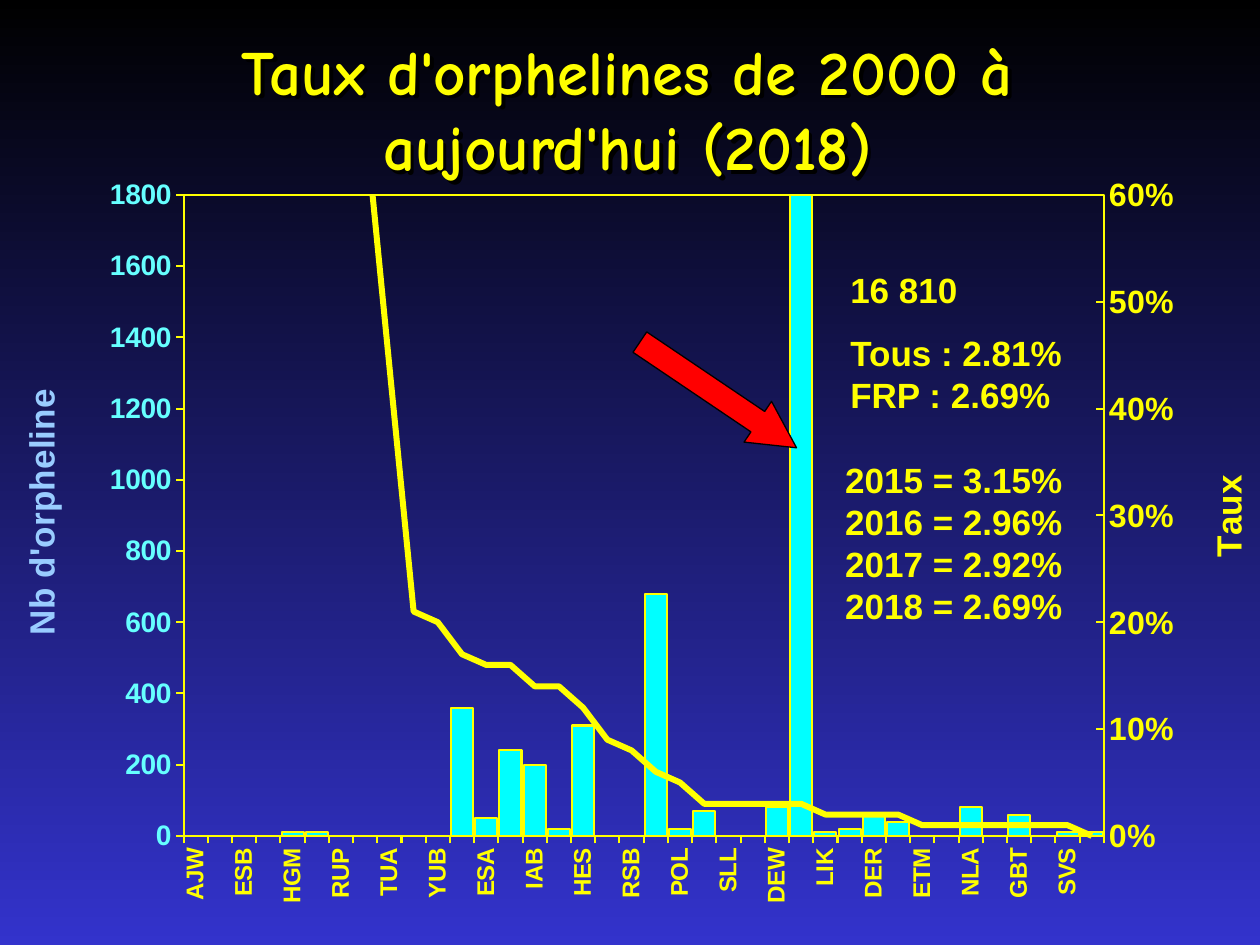
from copy import deepcopy

from lxml import etree
from pptx import Presentation
from pptx.chart.axis import ValueAxis
from pptx.chart.data import CategoryChartData
from pptx.dml.color import RGBColor
from pptx.enum.chart import XL_CHART_TYPE, XL_MARKER_STYLE, XL_TICK_MARK
from pptx.enum.shapes import MSO_SHAPE
from pptx.enum.text import MSO_ANCHOR, MSO_AUTO_SIZE, PP_ALIGN
from pptx.oxml import parse_xml
from pptx.oxml.ns import nsdecls, qn
from pptx.util import Inches, Pt

BLACK = RGBColor(0x00, 0x00, 0x00)
BLUE = RGBColor(0x33, 0x33, 0xCC)
YELLOW = RGBColor(0xFF, 0xFF, 0x00)
CYAN = RGBColor(0x00, 0xFF, 0xFF)
AQUA = RGBColor(0x66, 0xFF, 0xFF)
PALE = RGBColor(0x99, 0xCC, 0xFF)
RED = RGBColor(0xFF, 0x00, 0x00)

CODES = (
    "AJW DKV ESB MRA HGM ESM RUP GHL TUA NAW YUB FRS ESA ESI IAB LVR HES NOO RSB "
    "BLB POL DEH SLL BYM DEW FRP LIK CZP DER PLG ETM SKB NLA HRZ GBT RUM SVS CIJ"
).split()
COUNTS = [0, 0, 0, 0, 10, 10, 0, 0, 0, 0, 0, 360, 50, 240, 200, 20, 310, 0, 0,
          680, 20, 70, 0, 0, 80, 16810, 10, 20, 60, 40, 0, 0, 80, 0, 60, 0, 10, 10]
RATES = [1, 1, 1, 1, 0.89, 0.88, 0.75, 0.67, 0.44, 0.21, 0.2, 0.17, 0.16, 0.16,
         0.14, 0.14, 0.12, 0.09, 0.08, 0.06, 0.05, 0.03, 0.03, 0.03, 0.03, 0.03,
         0.02, 0.02, 0.02, 0.02, 0.01, 0.01, 0.01, 0.01, 0.01, 0.01, 0.01, 0]


def set_font(font, size, color, name="Arial"):
    font.size, font.bold, font.name = Pt(size), True, name
    font.color.rgb = color


def set_line(line, color, width):
    line.color.rgb = color
    line.width = Pt(width)


def set_back(slide):
    fill = slide.background.fill
    fill.gradient()
    fill.gradient_angle = 270
    for stop, color in zip(fill.gradient_stops, (BLACK, BLUE)):
        stop.color.rgb = color


def add_title(slide, text):
    box = slide.shapes.add_textbox(Inches(0.73), Inches(0.23), Inches(8.5), Inches(1.25))
    frame = box.text_frame
    frame.word_wrap = True
    frame.vertical_anchor = MSO_ANCHOR.MIDDLE
    frame.text = text
    para = frame.paragraphs[0]
    para.alignment = PP_ALIGN.CENTER
    set_font(para.font, 36, YELLOW, "Comic Neue")
    box._element.spPr.append(parse_xml(
        f'<a:effectLst {nsdecls("a")}><a:outerShdw dist="38100" dir="2700000">'
        f'<a:srgbClr val="{BLACK}"/></a:outerShdw></a:effectLst>'))


def add_note(slide, left, top, width, height, lines):
    box = slide.shapes.add_textbox(*map(Inches, (left, top, width, height)))
    frame = box.text_frame
    frame.word_wrap = False
    frame.auto_size = MSO_AUTO_SIZE.SHAPE_TO_FIT_TEXT
    frame.text = "\n".join(lines)
    for para in frame.paragraphs:
        set_font(para.font, 20, YELLOW)


def add_arrow(slide):
    arrow = slide.shapes.add_shape(
        MSO_SHAPE.RIGHT_ARROW, Inches(4.95), Inches(2.94), Inches(1.5), Inches(0.39))
    arrow.adjustments[0], arrow.adjustments[1] = 0.5, 0.95
    arrow.rotation = 34
    arrow.shadow.inherit = False
    arrow.fill.solid()
    arrow.fill.fore_color.rgb = RED
    set_line(arrow.line, BLACK, 0.75)


def layout(x, y, w=None, h=None):
    """Manual chart layout, in fractions of the chart's size."""
    parts = [("layoutTarget", "inner")] if w else []
    parts += [("xMode", "edge"), ("yMode", "edge"), ("x", x), ("y", y)]
    if w:
        parts += [("w", w), ("h", h)]
    body = "".join(f'<c:{tag} val="{val}"/>' for tag, val in parts)
    return parse_xml(f'<c:layout {nsdecls("c")}><c:manualLayout>{body}'
                     '</c:manualLayout></c:layout>')


def style_axis(axis, size, color, tick=XL_TICK_MARK.OUTSIDE):
    axis.has_major_gridlines = False
    axis.major_tick_mark = tick
    set_font(axis.tick_labels.font, size, color)
    set_line(axis.format.line, YELLOW, 1.15)


def scale_axis(axis, top, step):
    axis.minimum_scale, axis.maximum_scale, axis.major_unit = 0, top, step


def name_axis(axis, text, color, x, y):
    frame = axis.axis_title.text_frame
    frame.text = text
    set_font(frame.paragraphs[0].font, 20, color)
    frame._txBody.find(qn("a:bodyPr")).set("rot", "-5400000")
    title = axis.axis_title._element
    for old in title.findall(qn("c:layout")):
        title.remove(old)
    title.find(qn("c:tx")).addnext(layout(x, y))


def split_line(area):
    """Move the second series to a line plot with its own axes; return its value axis."""
    bars = area.find(qn("c:barChart"))
    rate = bars.findall(qn("c:ser"))[1]
    for tag in rate.findall(qn("c:invertIfNegative")):
        rate.remove(tag)
    plot = parse_xml(f'<c:lineChart {nsdecls("c")}><c:grouping val="standard"/>'
                     '<c:varyColors val="0"/><c:marker val="1"/>'
                     '<c:axId val="5001"/><c:axId val="5002"/></c:lineChart>')
    plot.insert(2, rate)
    bars.addnext(plot)
    cat = deepcopy(area.find(qn("c:catAx")))
    val = deepcopy(area.find(qn("c:valAx")))
    for axis, own, other in ((cat, "5001", "5002"), (val, "5002", "5001")):
        axis.find(qn("c:axId")).set("val", own)
        axis.find(qn("c:crossAx")).set("val", other)
    cat.find(qn("c:delete")).set("val", "1")
    val.find(qn("c:axPos")).set("val", "r")
    val.find(qn("c:crosses")).set("val", "max")
    area.find(qn("c:valAx")).addnext(cat)
    cat.addnext(val)
    return ValueAxis(val)


def add_plot(slide):
    data = CategoryChartData()
    data.categories = CODES
    data.add_series("Series 1", COUNTS, "0")
    data.add_series("Series 2", RATES, "0%")
    chart = slide.shapes.add_chart(
        XL_CHART_TYPE.COLUMN_CLUSTERED, Inches(0), Inches(1.23),
        Inches(10), Inches(6.22), data).chart
    chart.has_legend = chart.has_title = False
    chart.font.size, chart.font.name = Pt(11.5), "Arial"
    area = chart._chartSpace.chart.plotArea
    left = ValueAxis(area.find(qn("c:valAx")))
    right = split_line(area)

    bars, curve = chart.plots
    bars.gap_width = 10
    bars.vary_by_categories = False
    count, rate = bars.series[0], curve.series[0]
    count.format.fill.solid()
    count.format.fill.fore_color.rgb = CYAN
    set_line(count.format.line, YELLOW, 1.15)
    set_line(rate.format.line, YELLOW, 3.44)
    rate.marker.style = XL_MARKER_STYLE.NONE
    rate.smooth = False

    cat = chart.category_axis
    style_axis(cat, 13.8, YELLOW)
    cat._element.find(qn("c:txPr")).find(qn("a:bodyPr")).set("rot", "-5400000")
    skip = etree.Element(qn("c:tickLblSkip"), val="2")
    cat._element.find(qn("c:noMultiLvlLbl")).addprevious(skip)
    style_axis(left, 16.1, AQUA)
    scale_axis(left, 1800, 200)
    name_axis(left, "Nb d'orpheline", PALE, 0.01, 0.29)
    style_axis(right, 18.4, YELLOW, XL_TICK_MARK.INSIDE)
    scale_axis(right, 0.6, 0.1)
    for axis, form in ((left, "0"), (right, "0%")):
        axis.tick_labels.number_format = form
        axis.tick_labels.number_format_is_linked = False
    name_axis(right, "Taux", YELLOW, 0.954, 0.4)

    for old in area.findall(qn("c:layout")):
        area.remove(old)
    area.insert(0, layout(0.146, 0.051, 0.732, 0.818))
    area.append(parse_xml(
        f'<c:spPr {nsdecls("c", "a")}><a:noFill/><a:ln w="14605"><a:solidFill>'
        f'<a:srgbClr val="{YELLOW}"/></a:solidFill></a:ln></c:spPr>'))


def main():
    deck = Presentation()
    deck.slide_width, deck.slide_height = Inches(10), Inches(7.5)
    slide = deck.slides.add_slide(deck.slide_layouts[6])
    set_back(slide)
    add_title(slide, "Taux d'orphelines de 2000 à aujourd'hui (2018)")
    add_plot(slide)
    add_note(slide, 6.65, 2.08, 1.06, 0.44, ["16 810"])
    add_arrow(slide)
    add_note(slide, 6.65, 2.58, 1.89, 0.77, ["Tous : 2.81%", "FRP : 2.69%"])
    add_note(slide, 6.61, 3.59, 1.94, 1.45,
             ["2015 = 3.15%", "2016 = 2.96%", "2017 = 2.92%", "2018 = 2.69%"])
    deck.save("out.pptx")


if __name__ == "__main__":
    main()
